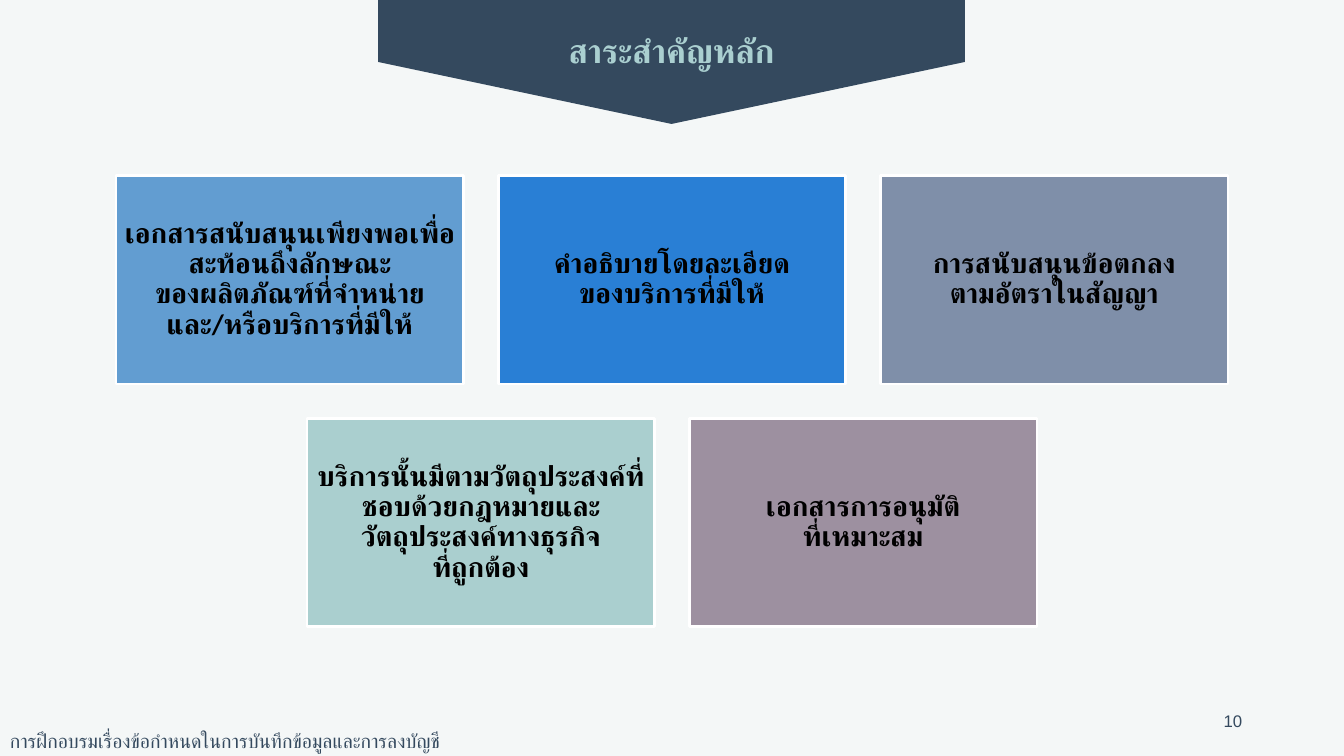
import pptx
import pptx.util
import pptx.dml.color
import pptx.enum.lang
import pptx.enum.shapes
import pptx.enum.text
import pptx.oxml
import pptx.oxml.ns

Inches = pptx.util.Inches
Pt = pptx.util.Pt
RGBColor = pptx.dml.color.RGBColor
SHAPE = pptx.enum.shapes.MSO_SHAPE
ALIGN = pptx.enum.text.PP_ALIGN
ANCHOR = pptx.enum.text.MSO_ANCHOR
THAI = pptx.enum.lang.MSO_LANGUAGE_ID.THAI

PAPER = RGBColor(0xF4, 0xF7, 0xF7)
NAVY = RGBColor(0x34, 0x49, 0x5E)
MINT = RGBColor(0xAA, 0xCF, 0xD0)
WHITE = RGBColor(0xFF, 0xFF, 0xFF)
BLACK = RGBColor(0, 0, 0)
SKY = RGBColor(0x62, 0x9D, 0xD1)
BLUE = RGBColor(0x29, 0x7F, 0xD5)
SLATE = RGBColor(0x7F, 0x8F, 0xA9)
AQUA = RGBColor(0xAA, 0xCF, 0xCF)
MAUVE = RGBColor(0x9D, 0x90, 0xA0)

WIDE, HIGH = 13.33, 7.5
CARD_W, CARD_H, GAP = 3.45, 2.07, 0.34

ROWS = [
    [
        ("เอกสารสนับสนุนเพียงพอเพื่อสะท้อนถึงลักษณะ\v"
         "ของผลิตภัณฑ์ที่จำหน่ายและ/หรือบริการที่มีให้", SKY),
        ("คำอธิบายโดยละเอียด\vของบริการที่มีให้", BLUE),
        ("การสนับสนุนข้อตกลง\vตามอัตราในสัญญา", SLATE),
    ],
    [
        ("บริการนั้นมีตามวัตถุประสงค์ที่ชอบด้วยกฎหมายและ"
         "วัตถุประสงค์ทางธุรกิจ\vที่ถูกต้อง", AQUA),
        ("เอกสารการอนุมัติ\vที่เหมาะสม", MAUVE),
    ],
]


def write(shape, text, size, color, align=ALIGN.LEFT, bold=False, face="Calibri"):
    """Fill the shape with one paragraph, styled for Thai as well as Latin."""
    frame = shape.text_frame
    frame.word_wrap = True
    frame.text = text
    para = frame.paragraphs[0]
    para.alignment = align
    for run in para.runs:
        font = run.font
        font.size = Pt(size)
        font.bold = bold
        font.color.rgb = color
        font.name = face
        font.language_id = THAI
        script = pptx.oxml.parse_xml(
            f'<a:cs {pptx.oxml.ns.nsdecls("a")} typeface="{face}"/>')
        font._element.append(script)
    return para


def label(slide, left, top, width, height, text, size, color, **style):
    box = slide.shapes.add_textbox(
        Inches(left), Inches(top), Inches(width), Inches(height))
    write(box, text, size, color, **style)
    return box


def banner(slide, left, top, width, height):
    """Draw the downward pennant, a pentagon turned a quarter about its centre."""
    shift = (width - height) / 2
    flag = slide.shapes.add_shape(
        SHAPE.PENTAGON, Inches(left + shift), Inches(top - shift),
        Inches(height), Inches(width))
    flag.rotation = 90
    flag.adjustments[0] = 0.5
    flag.shadow.inherit = False
    flag.fill.solid()
    flag.fill.fore_color.rgb = NAVY
    flag.line.fill.background()
    label(slide, left - 0.78, top + 0.25, width + 1.56, 0.5,
          "สาระสำคัญหลัก", 24, MINT, align=ALIGN.CENTER, bold=True)


def card(slide, left, top, text, color):
    box = slide.shapes.add_shape(
        SHAPE.RECTANGLE, Inches(left), Inches(top), Inches(CARD_W), Inches(CARD_H))
    box.shadow.inherit = False
    box.fill.solid()
    box.fill.fore_color.rgb = color
    box.line.color.rgb = WHITE
    box.line.width = Pt(2)
    frame = box.text_frame
    frame.margin_left = frame.margin_right = Inches(0.08)
    frame.margin_top = frame.margin_bottom = Inches(0.08)
    frame.vertical_anchor = ANCHOR.MIDDLE
    para = write(box, text, 20, BLACK, align=ALIGN.CENTER, bold=True)
    para.line_spacing = 0.9


def cards(slide, left, top, width):
    """Place the rows of cards, each row centred in the width."""
    for i, row in enumerate(ROWS):
        span = len(row) * (CARD_W + GAP) - GAP
        start = left + (width - span) / 2
        for j, (text, color) in enumerate(row):
            card(slide, start + j * (CARD_W + GAP), top + i * (CARD_H + GAP),
                 text, color)


def footer(slide, left, top):
    label(slide, left, top + 0.23, 5.69, 0.34,
          "การฝึกอบรมเรื่องข้อกำหนดในการบันทึกข้อมูลและการลงบัญชี", 14, NAVY)
    page = label(slide, left + 9.42, top, 3, 0.4, "10", 12, NAVY,
                 align=ALIGN.RIGHT, face="Arial")
    page.text_frame.vertical_anchor = ANCHOR.MIDDLE


def main():
    deck = pptx.Presentation()
    deck.slide_width = Inches(WIDE)
    deck.slide_height = Inches(HIGH)
    slide = deck.slides.add_slide(deck.slide_layouts[6])
    slide.background.fill.solid()
    slide.background.fill.fore_color.rgb = PAPER
    banner(slide, 3.75, 0, 5.82, 1.23)
    cards(slide, 0, 1.74, WIDE)
    footer(slide, 0, 6.95)
    deck.save("out.pptx")


if __name__ == "__main__":
    main()
